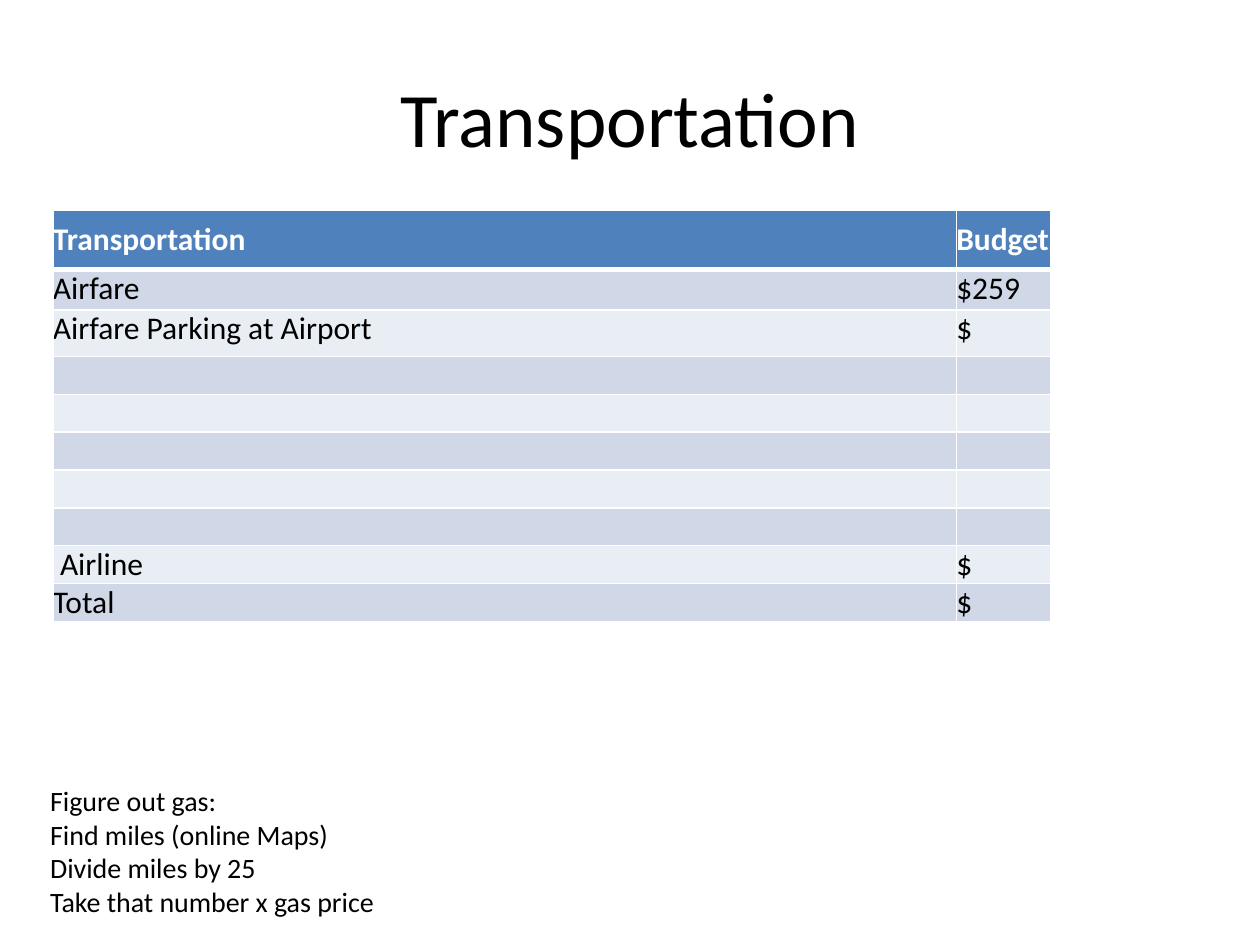
from lxml.etree import SubElement
from pptx import Presentation
from pptx.dml.color import RGBColor
from pptx.enum.text import MSO_ANCHOR, PP_ALIGN
from pptx.oxml.ns import qn
from pptx.util import Inches, Pt

COLORS = {
    "text": "000000",
    "white": "FFFFFF",
    "header": "4F81BD",
    "odd": "D0D8E8",
    "even": "E9EDF4",
}
FONT = "Calibri"
ROW_H = 0.3
COL_WIDTHS = [7.17, 0.75]
ROW_HEIGHTS = [0.47, 0.32, 0.37] + [ROW_H] * 7
ROWS = [
    ("Transportation", "Budget"),
    ("Airfare", "$259"),
    ("Airfare Parking at Airport", "$"),
    *[("", "")] * 5,
    (" Airline", "$"),
    ("Total", "$"),
]
GAS_STEPS = [
    "Figure out gas:",
    "Find miles (online Maps)",
    "Divide miles by 25",
    "Take that number x gas price",
]


def rgb(name):
    return RGBColor.from_string(COLORS[name])


def style(p, size, color="text", bold=False, align=PP_ALIGN.LEFT):
    p.alignment = align
    p.font.name = FONT
    p.font.size = Pt(size)
    p.font.bold = bold
    p.font.color.rgb = rgb(color)


def add_text(s, box, lines, size, align=PP_ALIGN.LEFT, anchor=MSO_ANCHOR.TOP, wrap=True):
    tf = s.shapes.add_textbox(*map(Inches, box)).text_frame
    tf.word_wrap = wrap
    tf.vertical_anchor = anchor
    tf.text = "\n".join(lines)
    for p in tf.paragraphs:
        style(p, size, align=align)


def set_borders(cell, top, bottom):
    tc_pr = cell._tc.get_or_add_tcPr()
    for side, width in (("L", 1), ("R", 1), ("T", top), ("B", bottom)):
        ln = SubElement(tc_pr, qn(f"a:ln{side}"), w=str(Pt(width)))
        fill = SubElement(ln, qn("a:solidFill"))
        SubElement(fill, qn("a:srgbClr"), val=COLORS["white"])


def fill_cell(cell, text, row):
    header = row == 0
    set_borders(cell, 3 if row == 1 else 1, 3 if header else 1)
    cell.fill.solid()
    cell.fill.fore_color.rgb = rgb("header" if header else "odd" if row % 2 else "even")
    cell.margin_left = cell.margin_right = cell.margin_top = cell.margin_bottom = 0
    cell.vertical_anchor = MSO_ANCHOR.MIDDLE if header else MSO_ANCHOR.TOP
    cell.text = text
    style(cell.text_frame.paragraphs[0], 18, "white" if header else "text", header)


def add_budget_table(s, left, top):
    box = (left, top, sum(COL_WIDTHS), sum(ROW_HEIGHTS))
    table = s.shapes.add_table(len(ROWS), len(COL_WIDTHS), *map(Inches, box)).table
    for col, width in zip(table.columns, COL_WIDTHS):
        col.width = Inches(width)
    for i, (row, height) in enumerate(zip(table.rows, ROW_HEIGHTS)):
        row.height = Inches(height)
        for cell, text in zip(row.cells, ROWS[i]):
            fill_cell(cell, text, i)


def main():
    prs = Presentation()
    prs.slide_width, prs.slide_height = Inches(10), Inches(7.5)
    s = prs.slides.add_slide(prs.slide_layouts[6])
    add_text(s, (0.5, 0.3, 9, 1.25), ["Transportation"], 44, PP_ALIGN.CENTER, MSO_ANCHOR.MIDDLE)
    add_budget_table(s, 0.42, 1.67)
    add_text(s, (0.3, 6.17, 2.8, 1.18), GAS_STEPS, 16, wrap=False)
    prs.save("out.pptx")


if __name__ == "__main__":
    main()
